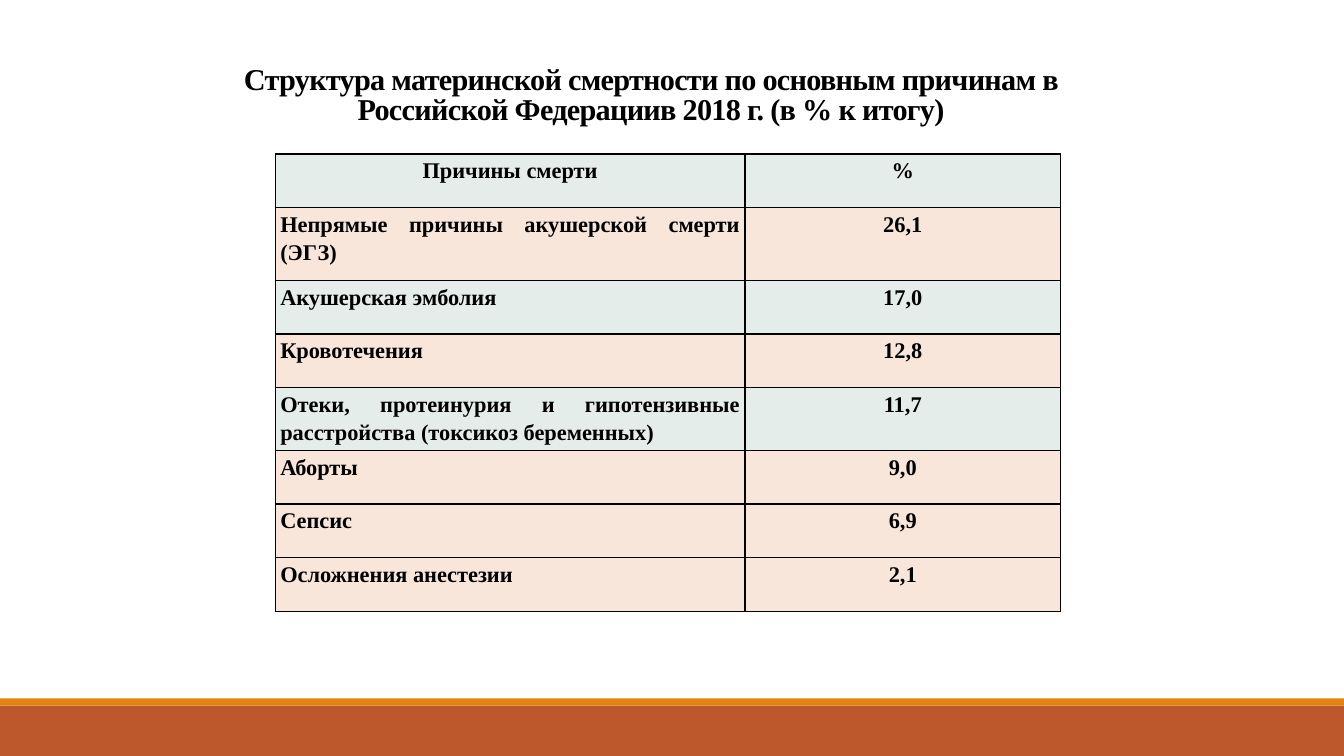
from lxml.etree import SubElement
from pptx import Presentation
from pptx.dml.color import RGBColor
from pptx.enum.shapes import MSO_SHAPE as Shape
from pptx.enum.text import MSO_ANCHOR as Anchor, PP_ALIGN as Align
from pptx.oxml.ns import qn
from pptx.util import Pt

COLORS = {
    "black": "000000",
    "rust": "BD582C",
    "orange": "E48312",
    "mint": "E5EDEB",
    "peach": "F8E6DA",
}
FONT = "Times New Roman"
TITLE = ("Структура материнской смертности по основным причинам в "
         "Российской Федерациив 2018 г. (в % к итогу)")
CAUSES = [
    ("Причины смерти", "%", "mint"),
    ("Непрямые причины акушерской смерти (ЭГЗ)", "26,1", "peach"),
    ("Акушерская эмболия", "17,0", "mint"),
    ("Кровотечения", "12,8", "peach"),
    ("Отеки, протеинурия и гипотензивные расстройства (токсикоз беременных)",
     "11,7", "mint"),
    ("Аборты", "9,0", "peach"),
    ("Сепсис", "6,9", "peach"),
    ("Осложнения анестезии", "2,1", "peach"),
]
COLUMN_WIDTHS = (335.5, 225.5)
ROW_HEIGHT = 38.3
TALL_ROW_HEIGHT = 52


def paint(target, color):
    target.fill.solid()
    target.fill.fore_color.rgb = RGBColor.from_string(COLORS[color])


def write(frame, text, size, align, line_spacing):
    frame.word_wrap = True
    frame.text = text
    para = frame.paragraphs[0]
    para.alignment = align
    para.line_spacing = line_spacing
    span = para.runs[0]
    span.font.name = FONT
    span.font.size = Pt(size)
    span.font.bold = True
    span.font.color.rgb = RGBColor.from_string(COLORS["black"])
    return span


def add_band(page, top, height, color):
    band = page.shapes.add_shape(Shape.RECTANGLE, 0, Pt(top), Pt(960), Pt(height))
    band.shadow.inherit = False
    band.line.fill.background()
    paint(band, color)


def add_title(page):
    box = page.shapes.add_textbox(Pt(162.7), Pt(18), Pt(604.8), Pt(76.3))
    box.text_frame.vertical_anchor = Anchor.BOTTOM
    span = write(box.text_frame, TITLE, 21.6, Align.CENTER, 0.85)
    span.font._element.set("spc", "-50")


def add_borders(cell):
    properties = cell._tc.get_or_add_tcPr()
    for side in ("a:lnL", "a:lnR", "a:lnT", "a:lnB"):
        line = SubElement(properties, qn(side), w=str(Pt(1)))
        fill = SubElement(line, qn("a:solidFill"))
        SubElement(fill, qn("a:srgbClr"), val=COLORS["black"])


def fill_cell(cell, text, align, color):
    cell.margin_left = cell.margin_right = Pt(3.6)
    cell.margin_top = Pt(0.7)
    cell.margin_bottom = 0
    write(cell.text_frame, text, 16, align, 1.15)
    add_borders(cell)
    paint(cell, color)


def add_causes_table(page):
    height = ROW_HEIGHT * (len(CAUSES) - 1) + TALL_ROW_HEIGHT
    frame = page.shapes.add_table(len(CAUSES), len(COLUMN_WIDTHS), Pt(196.6),
                                  Pt(110), Pt(sum(COLUMN_WIDTHS)), Pt(height))
    table = frame.table
    for column, width in zip(table.columns, COLUMN_WIDTHS):
        column.width = Pt(width)
    for index, (cause, share, color) in enumerate(CAUSES):
        table.rows[index].height = Pt(TALL_ROW_HEIGHT if index == 1 else ROW_HEIGHT)
        cause_align = Align.JUSTIFY if index else Align.CENTER
        fill_cell(table.cell(index, 0), cause, cause_align, color)
        fill_cell(table.cell(index, 1), share, Align.CENTER, color)


def main():
    deck = Presentation()
    deck.slide_width = Pt(960)
    deck.slide_height = Pt(540)
    page = deck.slides.add_slide(deck.slide_layouts[6])
    add_band(page, 504, 36, "rust")
    add_band(page, 498.8, 5.2, "orange")
    add_title(page)
    add_causes_table(page)
    deck.save("out.pptx")


if __name__ == "__main__":
    main()
